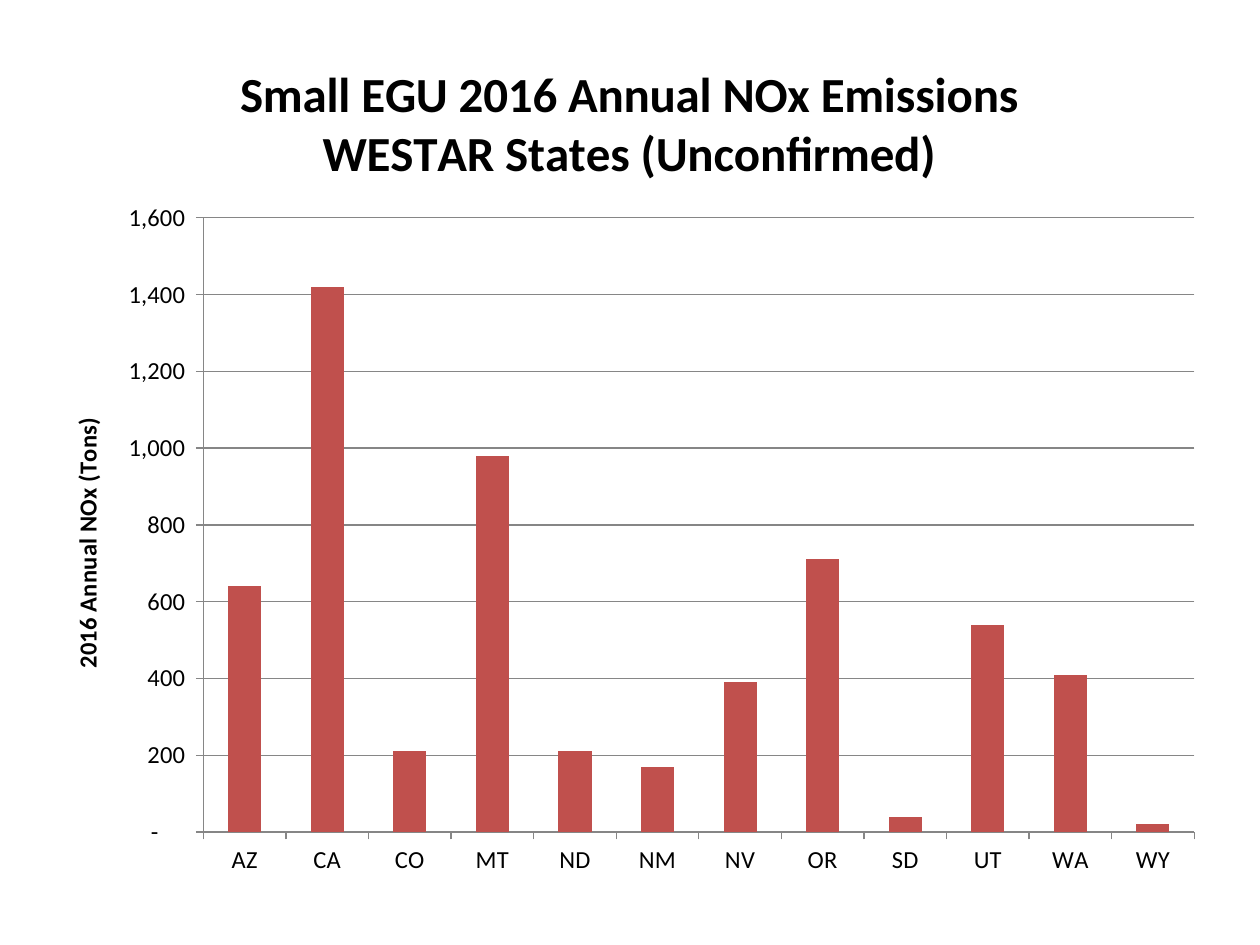
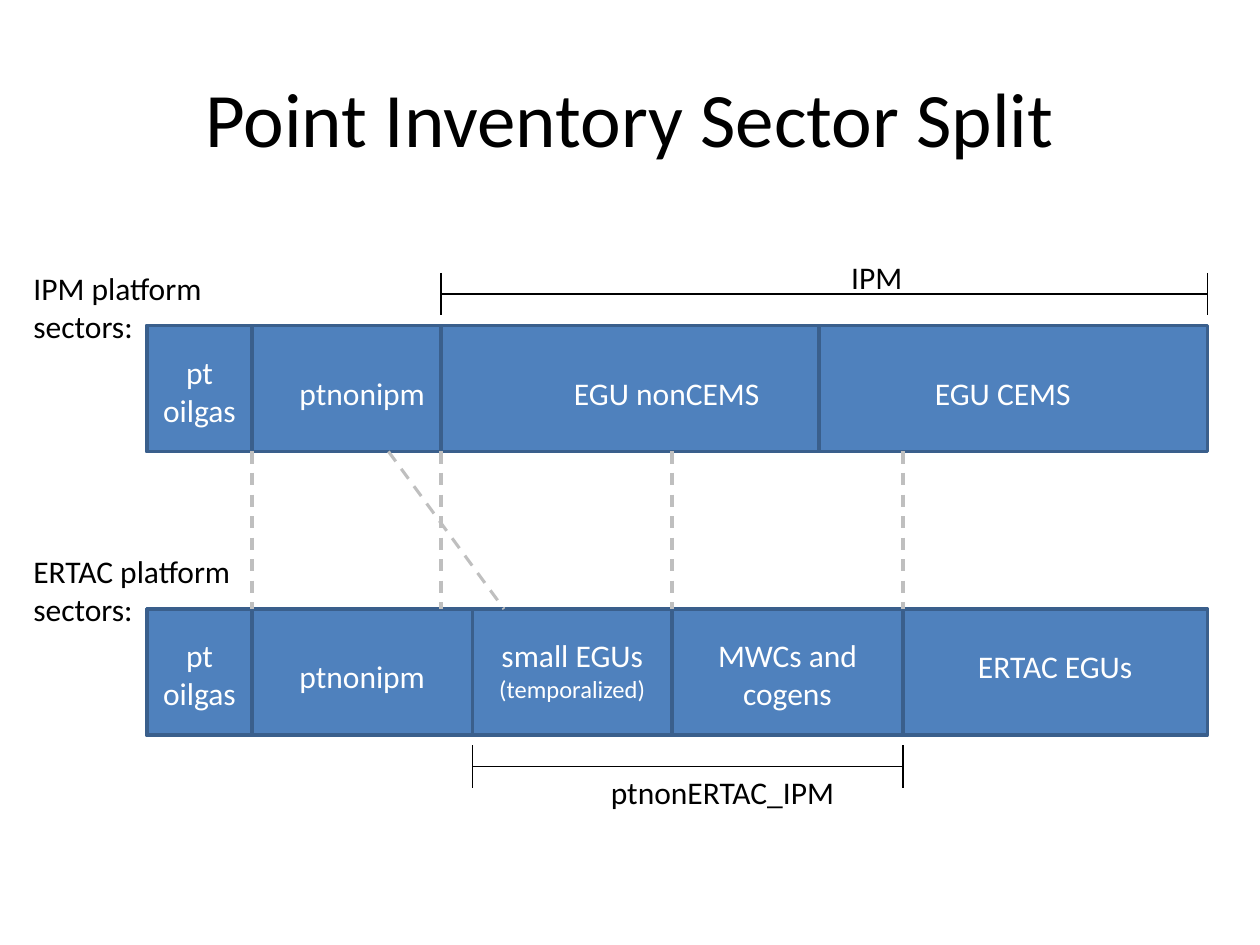
from dataclasses import dataclass

from lxml import etree
from pptx import Presentation
from pptx.chart.data import CategoryChartData
from pptx.dml.color import RGBColor
from pptx.enum.chart import XL_CHART_TYPE, XL_TICK_MARK
from pptx.enum.dml import MSO_LINE
from pptx.enum.shapes import MSO_CONNECTOR, MSO_SHAPE
from pptx.enum.text import MSO_ANCHOR, PP_ALIGN
from pptx.oxml.ns import qn
from pptx.slide import Slide
from pptx.util import Emu, Pt

PX = 9525  # 96 px to the inch
FONT = "Calibri"
BLACK = RGBColor(0x00, 0x00, 0x00)
WHITE = RGBColor(0xFF, 0xFF, 0xFF)
BLUE = RGBColor(0x4F, 0x81, 0xBD)
NAVY = RGBColor(0x3A, 0x5F, 0x8C)
RED = RGBColor(0xC0, 0x50, 0x4D)
GREY = RGBColor(0x86, 0x86, 0x86)
PALE = RGBColor(0xBF, 0xBF, 0xBF)

COLUMN = XL_CHART_TYPE.COLUMN_CLUSTERED
OUT = XL_TICK_MARK.OUTSIDE
RECT = MSO_SHAPE.RECTANGLE
STRAIGHT = MSO_CONNECTOR.STRAIGHT
DASH = MSO_LINE.DASH
MIDDLE = MSO_ANCHOR.MIDDLE
LEFT, CENTER = PP_ALIGN.LEFT, PP_ALIGN.CENTER

# Chart frame, in px
CHART_X, CHART_Y, CHART_W, CHART_H = 24, 24, 904, 656
TONS = {"AZ": 640, "CA": 1420, "CO": 210, "MT": 980, "ND": 210, "NM": 170,
        "NV": 390, "OR": 710, "SD": 40, "UT": 540, "WA": 410, "WY": 20}
TON_FORMAT = '_(* #,##0_);_(* \\(#,##0\\);_(* "-"??_);_('

# The two platform bars, in px
BAR_L, BAR_R, BAR_H = 112, 920, 96
IPM_Y, ERTAC_Y = 248, 464


@dataclass(frozen=True)
class Bar:
    top: int
    sectors: tuple[tuple[int, int], ...]  # left and right of each


@dataclass(frozen=True)
class Label:
    text: str
    left: int
    top: int
    width: int
    height: int = 38
    color: RGBColor = WHITE
    align: PP_ALIGN = CENTER
    note: str = ""


@dataclass(frozen=True)
class Span:
    left: int
    right: int
    top: int
    tick: int = 32


BARS = (
    Bar(IPM_Y, ((BAR_L, BAR_R), (BAR_L, 192), (192, 376), (336, 624))),
    Bar(ERTAC_Y, ((BAR_L, BAR_R), (BAR_L, 192), (192, 360), (360, 512),
                  (512, 688))),
)
LINKS = ((192, 192), (336, 336), (512, 512), (688, 688), (296, 384))
SPANS = (Span(360, 688, 568), Span(336, BAR_R, 208))
LABELS = (
    Label("IPM platform sectors:", 16, 200, 160, 68, BLACK, LEFT),
    Label("ERTAC platform sectors:", 16, 416, 200, 68, BLACK, LEFT),
    *(Label("pt oilgas", BAR_L, y + 16, 80, 68) for y in (IPM_Y, ERTAC_Y)),
    *(Label("ptnonipm", 216, y + 32, 120) for y in (IPM_Y, ERTAC_Y)),
    Label("EGU nonCEMS", 424, 280, 168),
    Label("EGU CEMS", 680, 280, 168),
    Label("small EGUs ", 368, 480, 136, 61, note="(temporalized)"),
    Label("MWCs and cogens", 520, 480, 160, 68),
    Label("ERTAC EGUs", 712, 488, 184),
    Label("ptnonERTAC_IPM", 456, 584, 192, color=BLACK, align=LEFT),
    Label("IPM", 608, 192, 120, color=BLACK),
)


def px(*vals: int) -> list[Emu]:
    return [Emu(v * PX) for v in vals]


def style(font, size: int, color: RGBColor = BLACK, bold: bool = False) -> None:
    font.name, font.size, font.bold = FONT, Pt(size), bold
    font.color.rgb = color


def place(node, x: int, y: int, w: int = 0, h: int = 0) -> None:
    """Fix a piece of the chart at px measured from the chart's corner."""
    tag = qn("c:layout")
    layout = node.find(tag)
    if layout is None:
        layout = etree.Element(tag)
        node.insert(0, layout)
    box = etree.SubElement(layout, qn("c:manualLayout"))
    rules = [("xMode", "edge"), ("yMode", "edge"),
             ("x", x / CHART_W), ("y", y / CHART_H)]
    if w:
        rules = [("layoutTarget", "inner"), *rules,
                 ("w", w / CHART_W), ("h", h / CHART_H)]
    for name, val in rules:
        etree.SubElement(box, qn(f"c:{name}")).set("val", str(val))


def caption(title, text: str, size: int, x: int, y: int) -> None:
    """Write a chart or axis title and put it in its place."""
    title.text_frame.text = text
    for para in title.text_frame.paragraphs:
        style(para.runs[0].font, size, bold=True)
    place(title.element, x, y)


def add_text(slide: Slide, item: Label, size: int = 18):
    box = slide.shapes.add_textbox(
        *px(item.left, item.top, item.width, item.height))
    frame = box.text_frame
    frame.word_wrap = True
    frame.text = item.text
    para = frame.paragraphs[0]
    para.alignment = item.align
    style(para.runs[0].font, size, item.color)
    if item.note:
        run = para.add_run()
        run.text = item.note
        style(run.font, 14, item.color)
    return frame


def add_line(slide: Slide, x1: int, y1: int, x2: int, y2: int,
             color: RGBColor = BLACK, width: float = 0.75):
    line = slide.shapes.add_connector(STRAIGHT, *px(x1, y1, x2, y2))
    line.line.color.rgb, line.line.width = color, Pt(width)
    etree.SubElement(line.element.spPr, qn("a:effectLst"))
    return line


def add_bar(slide: Slide, bar: Bar) -> None:
    for left, right in bar.sectors:
        rect = slide.shapes.add_shape(
            RECT, *px(left, bar.top, right - left, BAR_H))
        rect.shadow.inherit = False
        rect.fill.solid()
        rect.fill.fore_color.rgb = BLUE
        rect.line.color.rgb, rect.line.width = NAVY, Pt(2)


def add_span(slide: Slide, span: Span) -> None:
    for x in (span.left, span.right):
        add_line(slide, x, span.top, x, span.top + span.tick)
    mid = span.top + span.tick // 2
    add_line(slide, span.left, mid, span.right, mid)


def chart_slide(slide: Slide) -> None:
    data = CategoryChartData()
    data.categories = list(TONS)
    data.add_series("Series 1", list(TONS.values()))
    chart = slide.shapes.add_chart(
        COLUMN, *px(CHART_X, CHART_Y, CHART_W, CHART_H), data).chart
    style(chart.font, 14)
    chart.has_legend = False
    caption(chart.chart_title, "Small EGU 2016 Annual NOx Emissions\n"
            "WESTAR States (Unconfirmed)", 28, 156, 22)
    place(chart.element.find(".//" + qn("c:plotArea")), 131, 142, 755, 468)

    plot = chart.plots[0]
    plot.gap_width, plot.vary_by_categories = 150, False
    fill = plot.series[0].format.fill
    fill.solid()
    fill.fore_color.rgb = RED

    tons = chart.value_axis
    tons.minimum_scale, tons.maximum_scale, tons.major_unit = 0, 1600, 200
    tons.tick_labels.number_format = TON_FORMAT
    tons.tick_labels.number_format_is_linked = False
    caption(tons.axis_title, "2016 Annual NOx (Tons)", 14, 26, 291)
    for axis in (tons, chart.category_axis):
        axis.major_tick_mark = OUT
        axis.format.line.color.rgb = GREY
    tons.major_gridlines.format.line.color.rgb = GREY


def split_slide(slide: Slide) -> None:
    title = Label("Point Inventory Sector Split", 48, 29, 864, 120, BLACK)
    add_text(slide, title, 44).vertical_anchor = MIDDLE
    for bar in BARS:
        add_bar(slide, bar)
    for top, foot in LINKS:
        link = add_line(slide, top, IPM_Y + BAR_H, foot, ERTAC_Y, PALE, 1.75)
        link.line.dash_style = DASH
    for span in SPANS:
        add_span(slide, span)
    for item in LABELS:
        add_text(slide, item)


def main() -> None:
    deck = Presentation()
    deck.slide_width, deck.slide_height = px(960, 720)
    blank = deck.slide_layouts[6]
    for draw in (chart_slide, split_slide):
        draw(deck.slides.add_slide(blank))
    deck.save("out.pptx")


if __name__ == "__main__":
    main()
